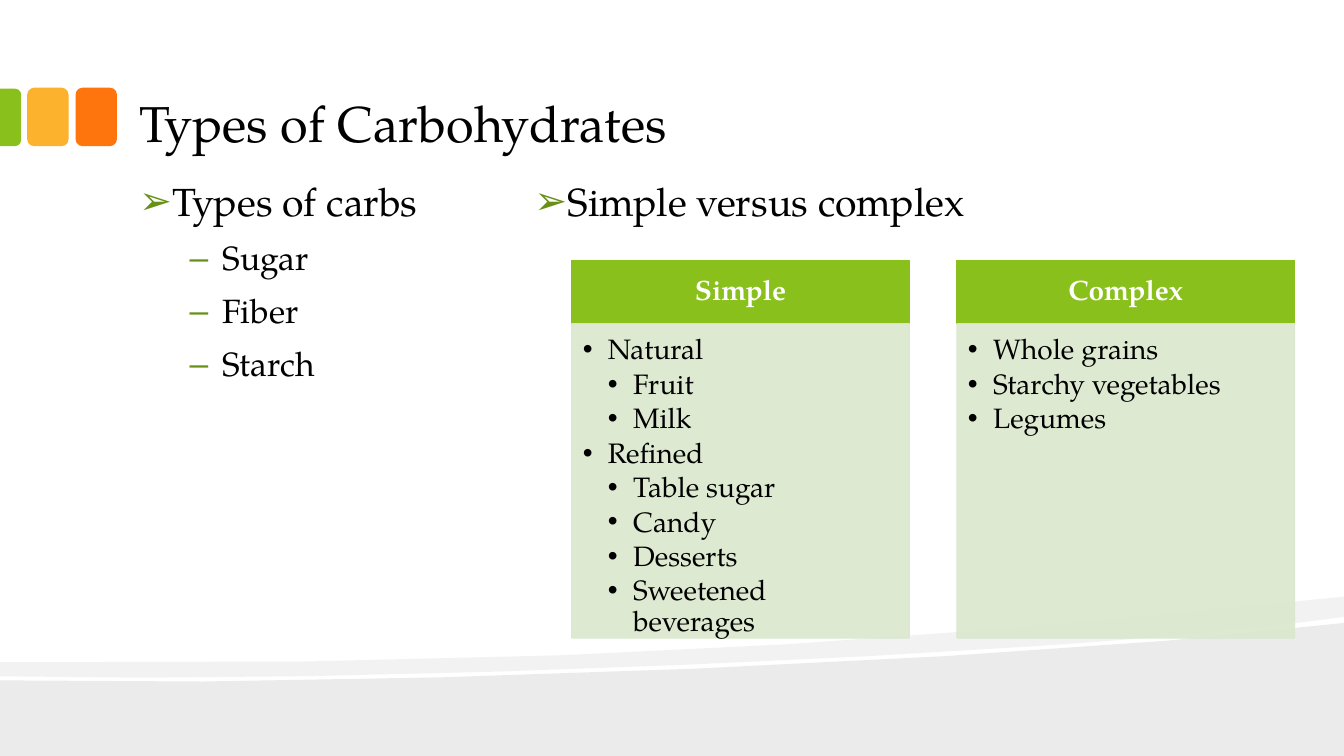
import pptx
import pptx.util
import pptx.dml.color
import pptx.enum.shapes
import pptx.enum.text
import pptx.oxml
import pptx.oxml.ns
from lxml import etree

Inches = pptx.util.Inches
Pt = pptx.util.Pt
RGBColor = pptx.dml.color.RGBColor
Shape = pptx.enum.shapes.MSO_SHAPE
Anchor = pptx.enum.text.MSO_ANCHOR
Align = pptx.enum.text.PP_ALIGN
qn = pptx.oxml.ns.qn

FONT = "TeX Gyre Pagella"
BLACK = RGBColor(0x00, 0x00, 0x00)
WHITE = RGBColor(0xFF, 0xFF, 0xFF)
GREEN = RGBColor(0x89, 0xC0, 0x1C)
DARK_GREEN = RGBColor(0x67, 0x90, 0x15)
PALE_GREEN = RGBColor(0xDA, 0xE8, 0xCD)
YELLOW = RGBColor(0xFC, 0xB2, 0x2C)
ORANGE = RGBColor(0xFE, 0x75, 0x0E)

TITLE = "Types of Carbohydrates"
OUTLINES = [
    ((1.25, 1.74, 3.25, 5), [("Types of carbs", 0), ("Sugar", 1), ("Fiber", 1), ("Starch", 1)]),
    ((5.17, 1.74, 6.83, 5), [("Simple versus complex", 0)]),
]
CARDS = [
    ("Simple", [("Natural", 0), ("Fruit", 1), ("Milk", 1), ("Refined", 0),
                ("Table sugar", 1), ("Candy", 1), ("Desserts", 1),
                ("Sweetened beverages", 1)]),
    ("Complex", [("Whole grains", 0), ("Starchy vegetables", 0), ("Legumes", 0)]),
]
WAVES = [
    (8, [(13.33, 6.18), (13.33, 7.5), (0, 7.5), (0, 6.75),
         [(3.52, 6.83), (10.42, 6.55), (13.33, 6.18)]]),
    (5, [(13.33, 5.92), (13.33, 6.12),
         [(12.55, 6.23), (11.49, 6.33), (10.29, 6.41)],
         [(6.98, 6.63), (2.58, 6.77), (0, 6.71)], (0, 6.57),
         [(6.52, 6.62), (9.71, 6.27), (13.33, 5.92)]]),
]
TABS = [
    (Shape.ROUNDED_RECTANGLE, (0.75, 0.87, 0.41, 0.58), 0, ORANGE),
    (Shape.ROUNDED_RECTANGLE, (0.27, 0.87, 0.41, 0.58), 0, YELLOW),
    (Shape.ROUND_2_SAME_RECTANGLE, (-0.18, 1.06, 0.57, 0.21), 90, GREEN),
]

OUTLINE_LEVELS = [
    {"size": 28, "before": 18, "margin": 0.33, "hang": 0.33, "bullet": "➢", "bullet_color": DARK_GREEN},
    {"size": 24, "before": 12, "margin": 0.83, "hang": 0.33, "bullet": "–", "bullet_color": DARK_GREEN},
]
CARD_LEVELS = [
    {"size": 20, "after": 3, "margin": margin, "hang": 0.25, "bullet": "•", "bullet_color": BLACK}
    for margin in (0.25, 0.5)
]
HEADER_LEVELS = [{"size": 20, "color": WHITE, "bold": True, "align": Align.CENTER}]
TITLE_LEVELS = [{"size": 36, "spacing": 1.0}]

CARD_LEFT, CARD_TOP, CARD_STEP, CARD_WIDTH = 5.67, 2.58, 3.82, 3.35
HEADER_HEIGHT, BODY_HEIGHT = 0.63, 3.12
PLAIN_INSETS = (0.13, 0.07, 0.13, 0.07)


def set_values(target, values):
    """Set each named attribute on the target."""
    for name, value in values.items():
        setattr(target, name, value)


def inches(values):
    """Turn plain numbers into lengths."""
    return [Inches(value) for value in values]


def paint(shape, color, opacity=100, outlined=False):
    """Give the shape a flat fill, and a matching outline if asked."""
    shape.shadow.inherit = False
    shape.fill.solid()
    shape.fill.fore_color.rgb = color
    if outlined:
        shape.line.color.rgb = color
        shape.line.width = Pt(0.75)
    else:
        shape.line.fill.background()
    if opacity < 100:
        for node in shape._element.spPr.iter(qn("a:srgbClr")):
            etree.SubElement(node, qn("a:alpha"), val=str(opacity * 1000))


def add_bullet(para, level):
    """Give the paragraph a hanging bullet."""
    props = para._p.get_or_add_pPr()
    props.set("marL", str(Inches(level["margin"])))
    props.set("indent", str(-Inches(level["hang"])))
    color = etree.SubElement(props, qn("a:buClr"))
    etree.SubElement(color, qn("a:srgbClr"), val=str(level["bullet_color"]))
    etree.SubElement(props, qn("a:buFont"), typeface="Arial")
    etree.SubElement(props, qn("a:buChar"), char=level["bullet"])


def write(shape, lines, levels, insets, anchor=Anchor.TOP):
    """Fill the shape with one paragraph per line, styled by level."""
    frame = shape.text_frame
    sides = ("margin_left", "margin_top", "margin_right", "margin_bottom")
    set_values(frame, dict(zip(sides, inches(insets))))
    set_values(frame, {"word_wrap": True, "vertical_anchor": anchor,
                       "auto_size": pptx.enum.text.MSO_AUTO_SIZE.NONE})
    for index, (text, depth) in enumerate(lines):
        level = levels[depth]
        para = frame.add_paragraph() if index else frame.paragraphs[0]
        set_values(para, {"level": depth, "alignment": level.get("align", Align.LEFT),
                          "line_spacing": level.get("spacing", 0.9),
                          "space_before": Pt(level.get("before", 0)),
                          "space_after": Pt(level.get("after", 0))})
        if "bullet" in level:
            add_bullet(para, level)
        span = para.add_run()
        span.text = text
        set_values(span.font, {"name": FONT, "size": Pt(level["size"]),
                               "bold": level.get("bold", False)})
        span.font.color.rgb = level.get("color", BLACK)


def curve_points(start, controls, steps=6):
    """Return points along a cubic curve."""
    points = []
    for step in range(1, steps + 1):
        t = step / steps
        weights = ((1 - t) ** 3, 3 * t * (1 - t) ** 2, 3 * t * t * (1 - t), t ** 3)
        points.append(tuple(sum(weight * point[axis] for weight, point
                                in zip(weights, [start, *controls])) for axis in (0, 1)))
    return points


def add_wave(page, opacity, outline):
    """Draw one translucent wave across the foot of the page."""
    points = [outline[0]]
    for part in outline[1:]:
        points += curve_points(points[-1], part) if isinstance(part, list) else [part]
    corners = [inches(point) for point in points]
    builder = page.shapes.build_freeform(*corners[0])
    builder.add_line_segments(corners[1:], close=True)
    paint(builder.convert_to_shape(), BLACK, opacity)


def main():
    """Build the carbohydrates slide."""
    deck = pptx.Presentation()
    set_values(deck, {"slide_width": Inches(13.33), "slide_height": Inches(7.5)})
    page = deck.slides.add_slide(deck.slide_layouts[5])
    for opacity, outline in WAVES:
        add_wave(page, opacity, outline)
    for kind, place, turn, color in TABS:
        tab = page.shapes.add_shape(kind, *inches(place))
        tab.rotation = turn
        if turn:
            tab.adjustments[0] = 0.29
        paint(tab, color)

    title = page.shapes.title
    set_values(title, dict(zip(("left", "top", "width", "height"),
                               inches((1.25, 0.16, 10.66, 1.42)))))
    write(title, [(TITLE, 0)], TITLE_LEVELS, PLAIN_INSETS, Anchor.BOTTOM)
    for place, lines in OUTLINES:
        box = page.shapes.add_textbox(*inches(place))
        write(box, lines, OUTLINE_LEVELS, PLAIN_INSETS)

    for index, (heading, items) in enumerate(CARDS):
        left = CARD_LEFT + index * CARD_STEP
        header = page.shapes.add_shape(
            Shape.RECTANGLE, *inches((left, CARD_TOP, CARD_WIDTH, HEADER_HEIGHT)))
        paint(header, GREEN, outlined=True)
        write(header, [(heading, 0)], HEADER_LEVELS, (0.16, 0.09, 0.16, 0.09), Anchor.MIDDLE)
        body = page.shapes.add_shape(
            Shape.RECTANGLE, *inches((left, CARD_TOP + HEADER_HEIGHT, CARD_WIDTH, BODY_HEIGHT)))
        paint(body, PALE_GREEN, 90, outlined=True)
        write(body, items, CARD_LEVELS, (0.11, 0.12, 0.16, 0.17))

    deck.save("out.pptx")


if __name__ == "__main__":
    main()
